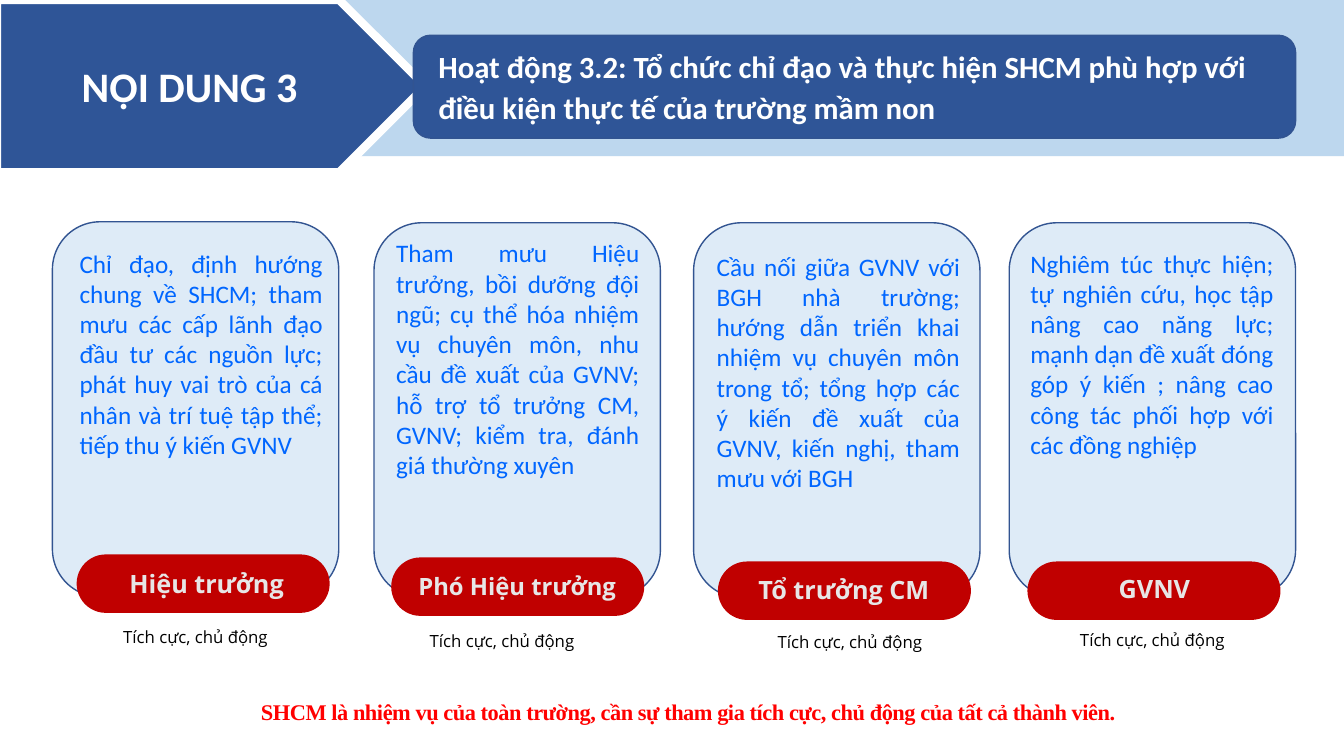
from collections import namedtuple

from pptx import Presentation
from pptx import util as u
from pptx.dml.color import RGBColor
from pptx.enum import shapes, text

EMU_PER_PX = 9144  # 100 px to the inch

WHITE = RGBColor(0xFF, 0xFF, 0xFF)
BLACK = RGBColor(0x00, 0x00, 0x00)
NAVY = RGBColor(0x2F, 0x55, 0x97)
OUTLINE = RGBColor(0x32, 0x54, 0x91)
SKY = RGBColor(0xBD, 0xD7, 0xEE)
PALE = RGBColor(0xDE, 0xEB, 0xF7)
CRIMSON = RGBColor(0xC0, 0x00, 0x00)
RED = RGBColor(0xFF, 0x00, 0x00)
BLUE = RGBColor(0x00, 0x66, 0xFF)
SILVER = RGBColor(0xE7, 0xE6, 0xE6)

SHAPE = shapes.MSO_SHAPE
ALIGN = text.PP_ALIGN
ANCHOR = text.MSO_ANCHOR

# Each place is (left, top) in px
Role = namedtuple("Role", "title size duty card body body_height pill label note")
ROLES = [
    Role("Hiệu trưởng", 18,
         "Chỉ đạo, định hướng chung về SHCM; tham mưu các cấp lãnh đạo đầu tư "
         "các nguồn lực; phát huy vai trò của cá nhân và trí tuệ tập thể; "
         "tiếp thu ý kiến GVNV",
         (52, 220), (69, 241), 283, (76, 550), (96, 559), (106, 617)),
    Role("Phó Hiệu trưởng", 17,
         "Tham mưu Hiệu trưởng, bồi dưỡng đội ngũ; cụ thể hóa nhiệm vụ chuyên "
         "môn, nhu cầu đề xuất của GVNV; hỗ trợ tổ trưởng CM, GVNV; kiểm tra, "
         "đánh giá thường xuyên",
         (371, 221), (383, 231), 313, (388, 553), (404, 562), (410, 621)),
    Role("Tổ trưởng CM", 18,
         "Cầu nối giữa GVNV với BGH nhà trường; hướng dẫn triển khai nhiệm vụ "
         "chuyên môn trong tổ; tổng hợp các ý kiến đề xuất của GVNV, kiến nghị, "
         "tham mưu với BGH",
         (688, 221), (701, 244), 283, (712, 557), (728, 565), (755, 622)),
    Role("GVNV", 18,
         "Nghiêm túc thực hiện; tự nghiên cứu, học tập nâng cao năng lực; mạnh "
         "dạn đề xuất đóng góp ý kiến ; nâng cao công tác phối hợp với các "
         "đồng nghiệp",
         (1001, 221), (1012, 241), 283, (1019, 557), (1036, 564), (1055, 620)),
]


def px(*lengths):
    return [u.Emu(length * EMU_PER_PX) for length in lengths]


def add_block(slide, kind, left, top, width, height, fill, line=None, weight=1):
    shape = slide.shapes.add_shape(kind, *px(left, top, width, height))
    shape.shadow.inherit = False
    shape.fill.solid()
    shape.fill.fore_color.rgb = fill
    if line is None:
        shape.line.fill.background()
    else:
        shape.line.color.rgb = line
        shape.line.width = u.Pt(weight)
    return shape


def write(shape, words, size, font, color, bold=False, align=ALIGN.CENTER,
          anchor=ANCHOR.TOP, spacing=None):
    frame = shape.text_frame
    frame.word_wrap = True
    frame.vertical_anchor = anchor
    paragraph = frame.paragraphs[0]
    paragraph.alignment = align
    if spacing:
        paragraph.line_spacing = spacing
    run = paragraph.add_run()
    run.text = words
    run.font.size = u.Pt(size)
    run.font.name = font
    run.font.bold = bold
    run.font.color.rgb = color
    return run


def add_text(slide, left, top, width, height, *content, **style):
    box = slide.shapes.add_textbox(*px(left, top, width, height))
    return write(box, *content, **style)


def add_role(slide, role):
    add_block(slide, SHAPE.FLOWCHART_ALTERNATE_PROCESS, *role.card, 284, 372,
              PALE, OUTLINE)
    pill = add_block(slide, SHAPE.ROUNDED_RECTANGLE, *role.pill, 251, 58, CRIMSON)
    pill.adjustments[0] = 0.5
    add_text(slide, *role.body, 261, role.body_height,
             role.duty, 18, "Calibri", BLUE, align=ALIGN.JUSTIFY)
    add_text(slide, *role.label, 218, 40,
             role.title, role.size, "Open Sans", SILVER, bold=True)
    add_text(slide, *role.note, 176, 30,
             "Tích cực, chủ động", 12, "Open Sans", BLACK)


def add_header(slide):
    add_block(slide, SHAPE.RECTANGLE, 0, 0, 1333, 155, SKY)
    arrow = add_block(slide, SHAPE.PENTAGON, -3, 0, 425, 171, NAVY, WHITE, 6)
    write(arrow, "NỘI DUNG 3", 30, "Calibri", WHITE, bold=True,
          anchor=ANCHOR.MIDDLE)
    add_block(slide, SHAPE.ROUNDED_RECTANGLE, 410, 35, 875, 102, NAVY, OUTLINE)
    add_text(slide, 425, 39, 846, 90,
             "Hoạt động 3.2: Tổ chức chỉ đạo và thực hiện SHCM phù hợp với "
             "điều kiện thực tế của trường mầm non",
             22, "Calibri", WHITE, bold=True, align=ALIGN.LEFT, spacing=1.1)


def add_conclusion(slide):
    run = add_text(slide, 155, 676, 1056, 46,
                   "SHCM là nhiệm vụ của toàn trường, cần sự tham gia tích cực, "
                   "chủ động của tất cả thành viên.",
                   16, "Times New Roman", RED, bold=True,
                   anchor=ANCHOR.MIDDLE, spacing=1.5)
    # Letter spacing in hundredths of a point
    run.font._element.set("spc", "-30")


def main():
    presentation = Presentation()
    presentation.slide_width, presentation.slide_height = px(1333, 750)
    slide = presentation.slides.add_slide(presentation.slide_layouts[6])

    # Title band
    add_header(slide)

    # Four roles
    for role in ROLES:
        add_role(slide, role)

    # Closing line
    add_conclusion(slide)

    presentation.save("out.pptx")


if __name__ == "__main__":
    main()
